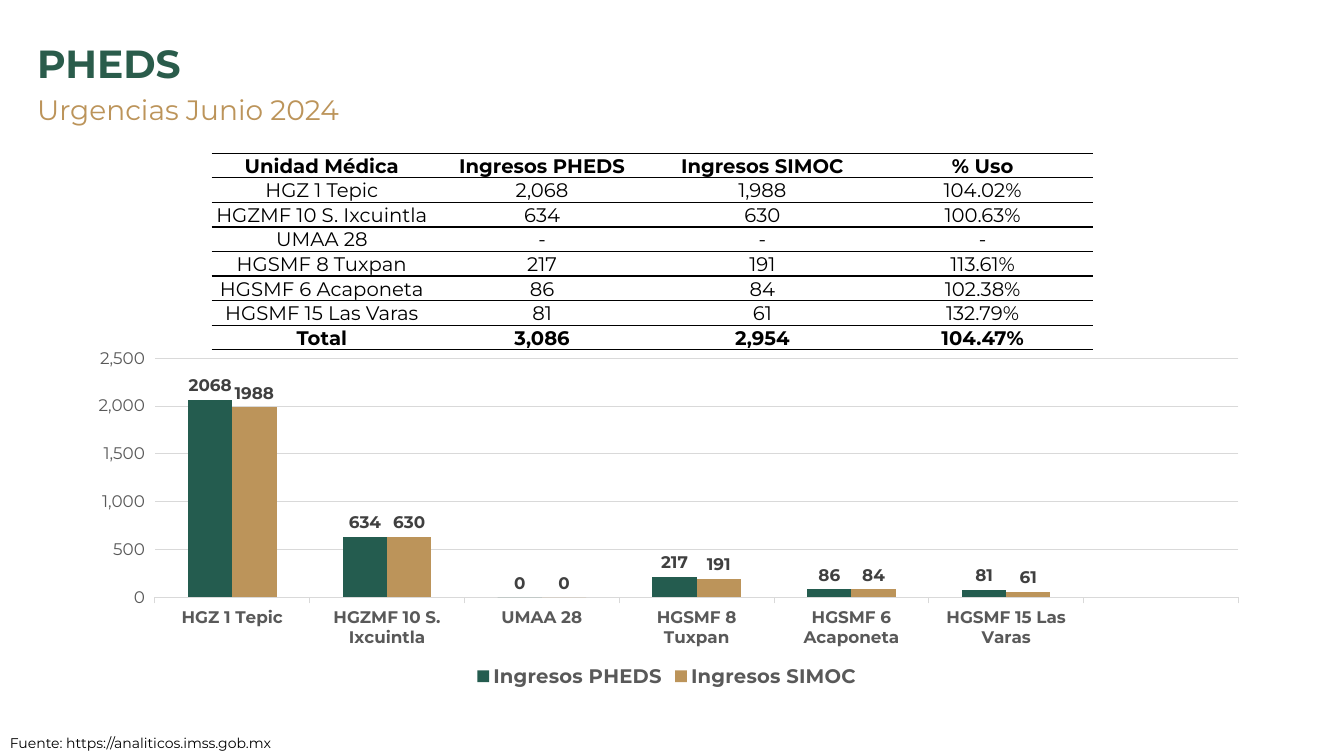
from pptx import Presentation
from pptx.chart.data import CategoryChartData
from pptx.dml.color import RGBColor
from pptx.enum.chart import XL_CHART_TYPE as ChartType, XL_LABEL_POSITION as LabelPos
from pptx.enum.chart import XL_LEGEND_POSITION as LegendPos, XL_TICK_MARK as Tick
from pptx.enum.text import MSO_ANCHOR as Anchor, PP_ALIGN as Align
from pptx.oxml import parse_xml
from pptx.oxml.ns import nsdecls
from pptx.util import Inches, Pt

FONT = "Montserrat"
BLACK = RGBColor(0x00, 0x00, 0x00)
TITLE_GREEN = RGBColor(0x2A, 0x5C, 0x4B)
BAR_GREEN = RGBColor(0x24, 0x5C, 0x4F)
GOLD = RGBColor(0xBC, 0x94, 0x5A)
GRID_GRAY = RGBColor(0xD9, 0xD9, 0xD9)
AXIS_GRAY = RGBColor(0x59, 0x59, 0x59)
LABEL_GRAY = RGBColor(0x40, 0x40, 0x40)

HEADINGS = ("Unidad Médica", "Ingresos PHEDS", "Ingresos SIMOC", "% Uso")
UNITS = [
    ("HGZ 1 Tepic", 2068, 1988, "104.02%"),
    ("HGZMF 10 S. Ixcuintla", 634, 630, "100.63%"),
    ("UMAA 28", 0, 0, "-"),
    ("HGSMF 8 Tuxpan", 217, 191, "113.61%"),
    ("HGSMF 6 Acaponeta", 86, 84, "102.38%"),
    ("HGSMF 15 Las Varas", 81, 61, "132.79%"),
]
TOTAL = ("Total", "3,086", "2,954", "104.47%")
HEADERS = [
    ("PHEDS", (0.27, 0.34, 12.96, 0.57), dict(size=28, color=TITLE_GREEN, bold=True)),
    ("Fuente: https://analiticos.imss.gob.mx", (0, 7.24, 2.92, 0.27),
     dict(size=10, wrap=False)),
    ("Urgencias Junio 2024", (0.27, 0.91, 11.5, 0.49),
     dict(size=20, color=GOLD, spacing=0.9)),
]
TABLE_AT = (2.1, 1.52, 8.74, 1.95)
CHART_AT = (0.71, 3.38, 11.81, 3.49)
PLOT_AREA = dict(x=0.07, y=0.05, w=0.91, h=0.68)


def style_font(font, size, color=BLACK, bold=False):
    font.name, font.size, font.bold = FONT, Pt(size), bold
    font.color.rgb = color


def write(frame, text, size=14, color=BLACK, bold=False, align=None, spacing=None, wrap=True):
    frame.word_wrap = wrap
    paragraph = frame.paragraphs[0]
    paragraph.alignment = align
    paragraph.line_spacing = spacing
    run = paragraph.add_run()
    run.text = text
    style_font(run.font, size, color, bold)


def rule_cell(cell):
    black = '<a:solidFill><a:srgbClr val="000000"/></a:solidFill>'
    sides = (("L", "<a:noFill/>"), ("R", "<a:noFill/>"), ("T", black), ("B", black))
    properties = cell._tc.get_or_add_tcPr()
    for place, (side, paint) in enumerate(sides):
        properties.insert(place, parse_xml(
            f'<a:ln{side} {nsdecls("a")} w="{Pt(1)}">{paint}</a:ln{side}>'))


def add_admissions_table(slide):
    shown = [(unit, *(f"{n:,}" if n else "-" for n in counts), use)
             for unit, *counts, use in UNITS]
    rows = [HEADINGS, *shown, TOTAL]
    table = slide.shapes.add_table(len(rows), len(HEADINGS), *map(Inches, TABLE_AT)).table
    table.first_row = table.horz_banding = False
    for row, values in zip(table.rows, rows):
        row.height = Inches(0.24)
        for cell, value in zip(row.cells, values):
            cell.margin_left = cell.margin_right = cell.margin_top = Inches(0.01)
            cell.margin_bottom = 0
            cell.vertical_anchor = Anchor.MIDDLE
            cell.fill.background()
            rule_cell(cell)
            write(cell.text_frame, value, bold=values in (HEADINGS, TOTAL), align=Align.CENTER)


def add_admissions_chart(slide):
    admissions = CategoryChartData(number_format="General")
    admissions.categories = [unit[0] for unit in UNITS] + [""]
    for column in (1, 2):
        admissions.add_series(HEADINGS[column], [unit[column] for unit in UNITS] + [None])
    chart = slide.shapes.add_chart(
        ChartType.COLUMN_CLUSTERED, *map(Inches, CHART_AT), admissions).chart
    style_font(chart.font, 10)
    chart.has_title = False
    chart.has_legend = True
    chart.legend.position = LegendPos.BOTTOM
    chart.legend.include_in_layout = False
    style_font(chart.legend.font, 14, AXIS_GRAY, True)

    units_axis, count_axis = chart.category_axis, chart.value_axis
    for axis, bold in ((units_axis, True), (count_axis, False)):
        axis.major_tick_mark = Tick.OUTSIDE
        style_font(axis.tick_labels.font, 12, AXIS_GRAY, bold)
    count_axis.minimum_scale, count_axis.maximum_scale, count_axis.major_unit = 0, 2500, 500
    count_axis.tick_labels.number_format = "#,##0"
    count_axis.tick_labels.number_format_is_linked = False
    count_axis.format.line.fill.background()
    for line in (units_axis.format.line, count_axis.major_gridlines.format.line):
        line.color.rgb, line.width = GRID_GRAY, Pt(0.75)

    plot = chart.plots[0]
    plot.gap_width, plot.overlap, plot.vary_by_categories = 150, 0, False
    for series, color in zip(plot.series, (BAR_GREEN, GOLD)):
        series.format.fill.solid()
        series.format.fill.fore_color.rgb = color
        labels = series.data_labels
        labels.show_value = True
        labels.position = LabelPos.OUTSIDE_END
        style_font(labels.font, 12, LABEL_GRAY, True)

    area = chart._chartSpace.chart.plotArea
    for layout in area.findall("{*}layout"):
        area.remove(layout)
    modes = "".join(f'<c:{k}Mode val="edge"/>' for k in "xy")
    sizes = "".join(f'<c:{k} val="{v}"/>' for k, v in PLOT_AREA.items())
    area.insert(0, parse_xml(
        f'<c:layout {nsdecls("c")}><c:manualLayout><c:layoutTarget val="inner"/>'
        f'{modes}{sizes}</c:manualLayout></c:layout>'))


def main():
    deck = Presentation()
    deck.slide_width, deck.slide_height = Inches(13.33), Inches(7.5)
    slide = deck.slides.add_slide(deck.slide_layouts[6])
    for text, place, look in HEADERS:
        write(slide.shapes.add_textbox(*map(Inches, place)).text_frame, text, **look)
    add_admissions_table(slide)
    add_admissions_chart(slide)
    deck.save("out.pptx")


if __name__ == "__main__":
    main()
